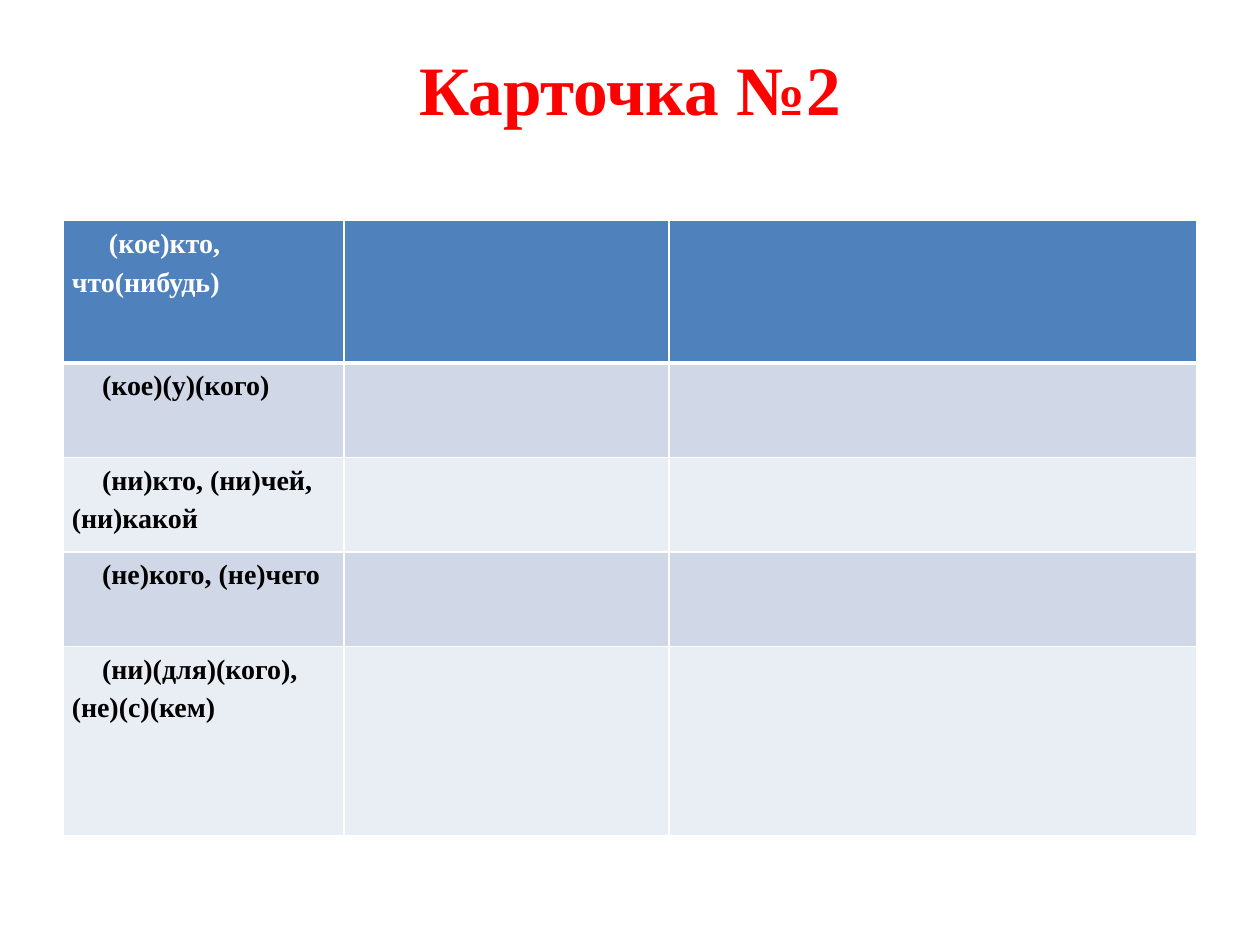
from dataclasses import dataclass

from lxml.etree import SubElement
from pptx import Presentation
from pptx.dml.color import RGBColor
from pptx.enum.text import MSO_ANCHOR, PP_ALIGN
from pptx.oxml.ns import qn
from pptx.table import _Cell as Cell
from pptx.text.text import _Paragraph as Paragraph
from pptx.util import Inches, Pt

FONT = "Times New Roman"
COLORS = {
    "title": "FF0000",
    "header": "4F81BD",
    "dark_band": "D0D8E8",
    "light_band": "E9EDF4",
    "white": "FFFFFF",
    "black": "000000",
}
COL_WIDTHS = [2.23, 2.58, 4.19]


@dataclass
class Row:
    text: str
    height: float
    fill: str
    color: str = "black"
    bottom: float = 1
    top: float = 1


ROWS = [
    Row(" (кое)кто, что(нибудь)", 1.13, "header", color="white", bottom=3),
    Row("(кое)(у)(кого)", 0.75, "dark_band", top=3),
    Row("(ни)кто, (ни)чей, (ни)какой", 0.75, "light_band"),
    Row("(не)кого, (не)чего", 0.75, "dark_band"),
    Row("(ни)(для)(кого), (не)(с)(кем)", 1.5, "light_band"),
]


def add_run(p: Paragraph, text: str, size: float, color: str) -> None:
    r = p.add_run()
    r.text = text
    r.font.name = FONT
    r.font.size = Pt(size)
    r.font.bold = True
    r.font.color.rgb = RGBColor.from_string(COLORS[color])


def set_borders(cell: Cell, row: Row) -> None:
    tc_pr = cell._tc.get_or_add_tcPr()
    widths = {"lnL": 1, "lnR": 1, "lnT": row.top, "lnB": row.bottom}
    for tag, width in widths.items():
        ln = SubElement(tc_pr, qn(f"a:{tag}"), w=str(Pt(width)))
        fill = SubElement(ln, qn("a:solidFill"))
        SubElement(fill, qn("a:srgbClr"), val=COLORS["white"])


def style_cell(cell: Cell, row: Row) -> None:
    set_borders(cell, row)
    cell.fill.solid()
    cell.fill.fore_color.rgb = RGBColor.from_string(COLORS[row.fill])


def fill_prompt(cell: Cell, row: Row) -> None:
    cell.margin_left = cell.margin_right = Inches(0.07)
    cell.margin_top = cell.margin_bottom = 0
    p = cell.text_frame.paragraphs[0]
    p.line_spacing = 1.25
    p_pr = p._p.get_or_add_pPr()
    p_pr.set("marL", "0")
    p_pr.set("indent", str(Inches(0.24)))
    add_run(p, row.text, 16, row.color)


def main() -> None:
    prs = Presentation()
    prs.slide_width, prs.slide_height = Inches(10), Inches(7.5)
    s = prs.slides.add_slide(prs.slide_layouts[6])

    title = s.shapes.add_textbox(Inches(0.5), Inches(0.3), Inches(9), Inches(0.79))
    tf = title.text_frame
    tf.word_wrap = True
    tf.vertical_anchor = MSO_ANCHOR.MIDDLE
    p = tf.paragraphs[0]
    p.alignment = PP_ALIGN.CENTER
    add_run(p, "Карточка №2", 39.6, "title")

    height = sum(row.height for row in ROWS)
    table = s.shapes.add_table(
        len(ROWS), len(COL_WIDTHS), Inches(0.5), Inches(1.75), Inches(9), Inches(height)
    ).table
    table.horz_banding = False
    for col, width in zip(table.columns, COL_WIDTHS):
        col.width = Inches(width)
    for tr, row in zip(table.rows, ROWS):
        tr.height = Inches(row.height)
        for cell in tr.cells:
            style_cell(cell, row)
        fill_prompt(tr.cells[0], row)

    prs.save("out.pptx")


if __name__ == "__main__":
    main()
